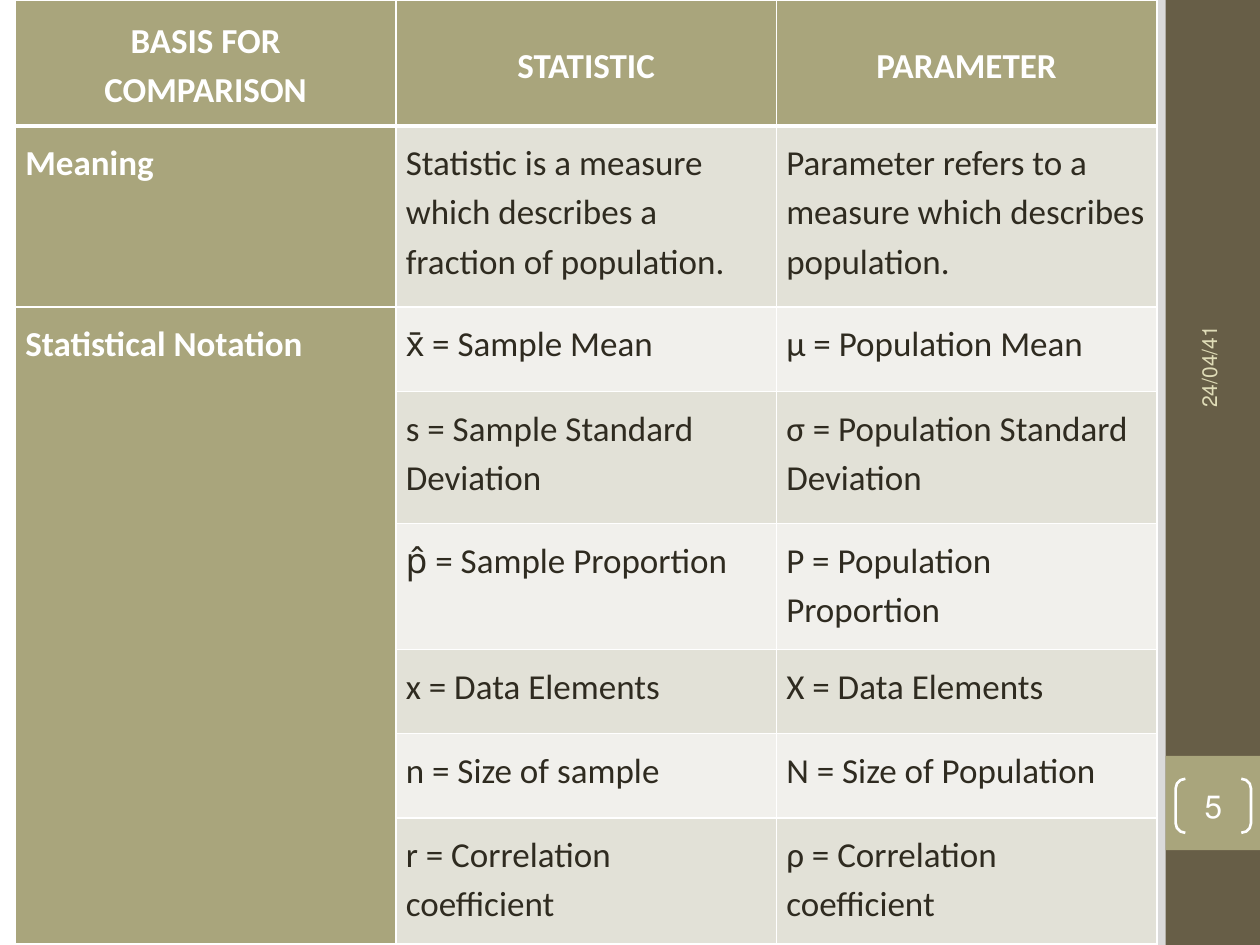
from lxml import etree
from pptx import Presentation
from pptx.dml.color import RGBColor
from pptx.enum.shapes import MSO_SHAPE as SHAPE
from pptx.enum.text import MSO_ANCHOR as ANCHOR, PP_ALIGN as ALIGN
from pptx.oxml import parse_xml
from pptx.oxml.ns import nsdecls, qn
from pptx.util import Cm, Pt

# Content
ROWS = [
    ("BASIS FOR COMPARISON", "STATISTIC", "PARAMETER"),
    ("Meaning", "Statistic is a measure which describes a fraction of population.",
     "Parameter refers to a measure which describes population."),
    ("Statistical Notation", "x̄ = Sample Mean", "μ = Population Mean"),
    ("", "s = Sample Standard Deviation", "σ = Population Standard Deviation"),
    ("", "p̂ = Sample Proportion", "P = Population Proportion"),
    ("", "x = Data Elements", "X = Data Elements"),
    ("", "n = Size of sample", "N = Size of Population"),
    ("", "r = Correlation coefficient", "ρ = Correlation coefficient"),
]
ROW_HEIGHTS = [2.54, 3.65, 1.7, 2.66, 2.54, 1.7, 1.7, 2.54]
COL_WIDTH = 7.67
DATE, PAGE = "24/04/41", "5"
FONT = "Calibri"
WHITE, OLIVE, BROWN = "FFFFFF", "A9A57C", "675E47"
INK, SAND = "2F2B20", "DFDCB7"
BANDS = ["F1F0EC", "E2E1D7"]


def rgb(value):
    return RGBColor.from_string(value)


def fill(target, color):
    target.fill.solid()
    target.fill.fore_color.rgb = rgb(color)


def write(tf, text, size, color, align, bold=False, rtl=False):
    tf.text = text
    p = tf.paragraphs[0]
    p.alignment = align
    if rtl:
        p._p.get_or_add_pPr().set("rtl", "1")
    font = p.runs[0].font
    font.name, font.size, font.bold = FONT, Pt(size), bold
    font.color.rgb = rgb(color)
    return p


def add_shape(kind, x, y, w, h, color=None):
    sp = s.shapes.add_shape(kind, Cm(x), Cm(y), Cm(w), Cm(h))
    sp.shadow.inherit = False
    if color:
        fill(sp, color)
        sp.line.fill.background()
    else:
        sp.fill.background()
    return sp


def add_borders(cell, top, bottom):
    tc_pr = cell._tc.get_or_add_tcPr()
    widths = {"lnL": 1, "lnR": 1, "lnT": top, "lnB": bottom}
    for i, (side, width) in enumerate(widths.items()):
        ln = etree.Element(qn(f"a:{side}"), w=str(Pt(width)))
        solid = etree.SubElement(ln, qn("a:solidFill"))
        etree.SubElement(solid, qn("a:srgbClr"), val=WHITE)
        tc_pr.insert(i, ln)


prs = Presentation()
prs.slide_width, prs.slide_height = Cm(25.4), Cm(19.05)
s = prs.slides.add_slide(prs.slide_layouts[6])

# Background gradient
stops = "".join(f'<a:gs pos="{pos}"><a:srgbClr val="{color}"/></a:gs>'
                for pos, color in [(0, WHITE), (75000, WHITE), (100000, "DADADA")])
s.element.cSld.insert(0, parse_xml(
    f'<p:bg {nsdecls("p", "a")}><p:bgPr><a:gradFill><a:gsLst>{stops}</a:gsLst>'
    '<a:path path="circle"><a:fillToRect l="20000" t="50000" r="100000" b="50000"/>'
    '</a:path></a:gradFill><a:effectLst/></p:bgPr></p:bg>'))

# Side bar
add_shape(SHAPE.RECTANGLE, 23.5, 0, 1.9, 19.05, BROWN)
add_shape(SHAPE.RECTANGLE, 23.5, 15.24, 1.9, 1.9, OLIVE)

# Comparison table
table = s.shapes.add_table(len(ROWS), 3, Cm(0.31), Cm(0), Cm(3 * COL_WIDTH),
                           Cm(sum(ROW_HEIGHTS))).table
for col in table.columns:
    col.width = Cm(COL_WIDTH)
for r, (texts, height) in enumerate(zip(ROWS, ROW_HEIGHTS)):
    table.rows[r].height = Cm(height)
    for c, text in enumerate(texts):
        cell = table.cell(r, c)
        header, label = r == 0, r == 0 or c == 0
        cell.margin_left = cell.margin_right = Cm(0.2)
        cell.margin_top = cell.margin_bottom = Cm(0.2)
        cell.vertical_anchor = ANCHOR.MIDDLE if header else ANCHOR.TOP
        fill(cell, OLIVE if label else BANDS[r % 2])
        add_borders(cell, 3 if r == 1 else 1, 3 if header else 1)
        if text:
            p = write(cell.text_frame, text, 20, WHITE if label else INK,
                      ALIGN.CENTER if header else ALIGN.LEFT, label)
            p.line_spacing, p.space_after = 1.15, Pt(12)
table.cell(2, 0).merge(table.cell(len(ROWS) - 1, 0))

# Date along the side bar
date = s.shapes.add_textbox(Cm(20.98), Cm(4.57), Cm(6.78), Cm(1.02))
date.rotation = 270
date.text_frame.word_wrap = True
date.text_frame.vertical_anchor = ANCHOR.MIDDLE
write(date.text_frame, DATE, 12, SAND, ALIGN.LEFT, rtl=True)

# Page number in brackets
page = add_shape(SHAPE.DOUBLE_BRACKET, 23.7, 15.7, 1.52, 1.09)
page.adjustments[0] = 0.18
page.line.color.rgb = rgb(WHITE)
page.line.width = Pt(1.5)
tf = page.text_frame
tf.margin_left = tf.margin_right = tf.margin_top = tf.margin_bottom = 0
tf.vertical_anchor = ANCHOR.MIDDLE
write(tf, PAGE, 18, WHITE, ALIGN.CENTER, rtl=True)

prs.save("out.pptx")
